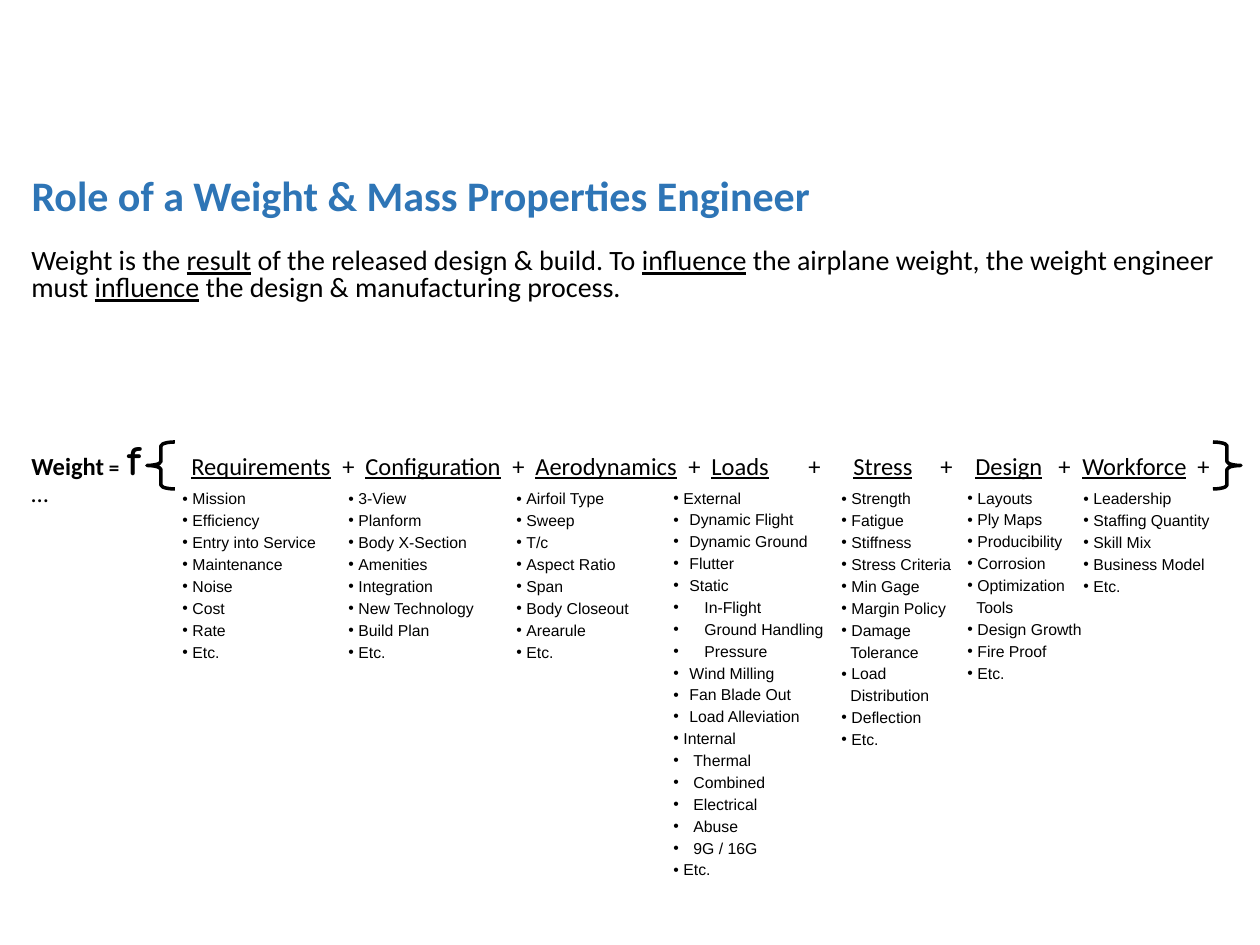
from lxml import etree
from pptx import Presentation
from pptx import util as u
from pptx.dml.color import RGBColor
from pptx.enum import shapes, text
from pptx.oxml.ns import qn

PX = 914400 / 126


def px(n):
    return u.Emu(round(n * PX))


def style(span, size, name="Calibri", color="000000", bold=False, underline=False):
    span.font.size = u.Pt(size)
    span.font.name = name
    span.font.color.rgb = RGBColor.from_string(color)
    span.font.bold = bold
    span.font.underline = underline


deck = Presentation()
deck.slide_width, deck.slide_height = px(1260), px(945)
page = deck.slides.add_slide(deck.slide_layouts[5])

# Title
title = page.shapes.title
title.left, title.top, title.width, title.height = px(19), px(163), px(1217), px(63)
title.text_frame.text = "Role of a Weight & Mass Properties Engineer"
title.text_frame.auto_size = text.MSO_AUTO_SIZE.NONE
title.text_frame.vertical_anchor = text.MSO_ANCHOR.TOP
para = title.text_frame.paragraphs[0]
para.alignment = text.PP_ALIGN.LEFT
style(para.runs[0], 24, color="2E75B6", bold=True)

# Statement, with every second piece underlined
pieces = ["Weight is the ", "result", " of the released design & build. To ", "influence",
          " the airplane weight, the weight engineer must ", "influence",
          " the design & manufacturing process."]
box = page.shapes.add_textbox(px(19), px(243), px(1217), px(68))
box.text_frame.word_wrap = True
para = box.text_frame.paragraphs[0]
para.line_spacing = 0.8
for i, piece in enumerate(pieces):
    span = para.add_run()
    span.text = piece
    style(span, 16, underline=i % 2 == 1)

# Factor lists: left, top, items as (text, indent of the text, bulleted)
PLAIN, SUB, SUBSUB, INNER = 10, 16, 31, 20


def items(names, indent=PLAIN):
    return [(name, indent, True) for name in names.split("|")]


columns = [
    (170, 488, items("Mission|Efficiency|Entry into Service|Maintenance|Noise|Cost|Rate|Etc.")),
    (336, 488, items("3-View|Planform|Body X-Section|Amenities|Integration|New Technology"
                     "|Build Plan|Etc.")),
    (504, 488, items("Airfoil Type|Sweep|T/c|Aspect Ratio|Span|Body Closeout|Arearule|Etc.")),
    (661, 487, items("External") + items("Dynamic Flight|Dynamic Ground|Flutter|Static", SUB)
     + items("In-Flight|Ground Handling|Pressure", SUBSUB)
     + items("Wind Milling|Fan Blade Out|Load Alleviation", SUB) + items("Internal")
     + items("Thermal|Combined|Electrical|Abuse|9G / 16G", INNER) + items("Etc.")),
    (829, 488, items("Strength|Fatigue|Stiffness|Stress Criteria|Min Gage|Margin Policy|Damage")
     + [("Tolerance", 9, False)] + items("Load") + [("Distribution", 9, False)]
     + items("Deflection|Etc.")),
    (955, 487, items("Layouts|Ply Maps|Producibility|Corrosion|Optimization")
     + [("Tools", 9, False)] + items("Design Growth|Fire Proof|Etc.")),
    (1071, 488, items("Leadership|Staffing Quantity|Skill Mix|Business Model|Etc.")),
]
for left, top, entries in columns:
    box = page.shapes.add_textbox(px(left), px(top), px(180), px(22 * len(entries) + 13))
    frame = box.text_frame
    frame.word_wrap = True
    frame.text = "\n".join(name for name, _, _ in entries)
    for i, (para, (_, indent, bulleted)) in enumerate(zip(frame.paragraphs, entries)):
        props = para._p.get_or_add_pPr()
        props.set("marL", str(px(indent)))
        if bulleted:
            props.set("indent", str(-px(indent)))
            etree.SubElement(props, qn("a:buFont"), typeface="Arial")
            etree.SubElement(props, qn("a:buChar"), char="•")
        para.line_spacing = u.Pt(8)
        if i:
            para.space_before = u.Pt(4.5)
        style(para.runs[0], 9, "Arial")

# Formula line: each term and plus sign sits at its own tab stop
terms = [("Requirements", 192, 343), ("Configuration", 366, 513), ("Aerodynamics", 536, 689),
         ("Loads", 712, 809), ("Stress", 854, 941), ("Design", 976, 1059),
         ("Workforce", 1083, 1198)]
box = page.shapes.add_textbox(px(19), px(437), px(1212), px(57))
box.text_frame.word_wrap = True
para = box.text_frame.paragraphs[0]
para.line_spacing = 0.8
text_left = 32
tabs = etree.SubElement(para._p.get_or_add_pPr(), qn("a:tabLst"))
for stop in [128] + [x for term in terms for x in term[1:]]:
    etree.SubElement(tabs, qn("a:tab"), pos=str(px(stop - text_left)), algn="l")

spans = [("Weight", 14, "Calibri", True, False), (" =\t", 12, "Calibri", True, False),
         ("f", 24, "Comic Neue", True, False)]
for name, _, _ in terms:
    spans += [("\t", 14, "Calibri", False, False), (name, 14, "Calibri", False, True),
              ("\t+", 14, "Calibri", False, False)]
spans.append((" …", 14, "Calibri", False, False))
for words, size, font, bold, underline in spans:
    span = para.add_run()
    span.text = words
    style(span, size, font, bold=bold, underline=underline)

# Braces around the terms
for kind, left in [(shapes.MSO_SHAPE.LEFT_BRACE, 147), (shapes.MSO_SHAPE.RIGHT_BRACE, 1213)]:
    brace = page.shapes.add_shape(kind, px(left), px(442), px(28), px(47))
    brace.shadow.inherit = False
    brace.adjustments[0] = 0.14
    brace.fill.background()
    brace.line.color.rgb = RGBColor.from_string("000000")
    brace.line.width = u.Pt(2)

deck.save("out.pptx")
